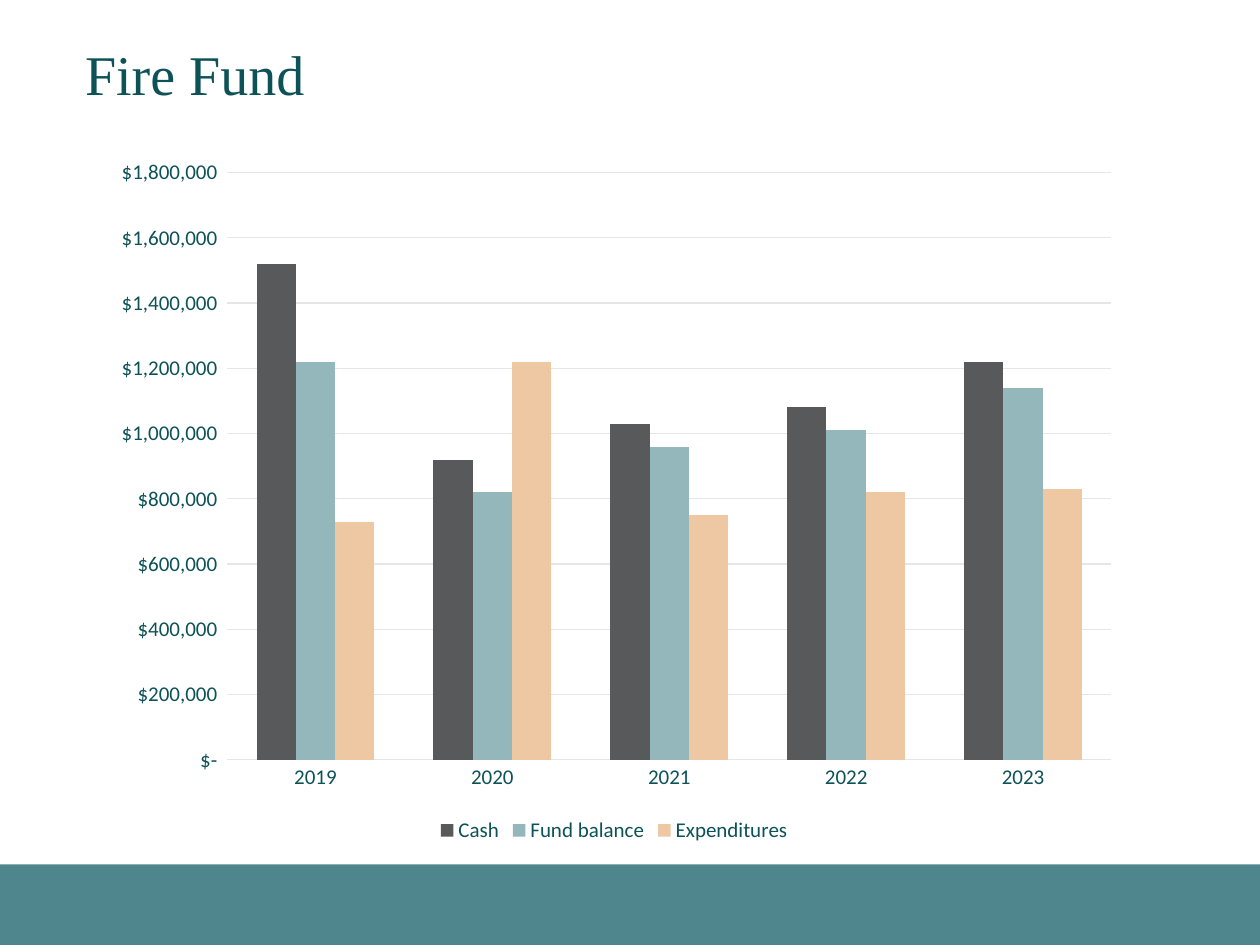
from dataclasses import dataclass

from pptx import Presentation
from pptx.chart.data import CategoryChartData
from pptx.dml.color import RGBColor
from pptx.enum.chart import XL_CHART_TYPE, XL_LEGEND_POSITION, XL_TICK_MARK
from pptx.enum.shapes import MSO_SHAPE
from pptx.enum.text import MSO_ANCHOR
from pptx.util import Pt

CLUSTERED = XL_CHART_TYPE.COLUMN_CLUSTERED
LEGEND_BOTTOM = XL_LEGEND_POSITION.BOTTOM
NO_TICK = XL_TICK_MARK.NONE
RECTANGLE = MSO_SHAPE.RECTANGLE
MIDDLE = MSO_ANCHOR.MIDDLE

COLORS = {
    "band": "4F868E",
    "text": "0D5257",
    "grid": "E6E6E7",
    "cash": "58595B",
    "balance": "93B7BB",
    "expenditures": "EDC8A3",
}
DOLLARS = r'_("$"* #,##0_);_("$"* \(#,##0\);_("$"* "-"_);_(@_)'
YEARS = ["2019", "2020", "2021", "2022", "2023"]


@dataclass
class FundSeries:
    name: str
    color: str
    thousands: list[int]


FUND_SERIES = [
    FundSeries("Cash", "cash", [1520, 920, 1030, 1080, 1220]),
    FundSeries("Fund balance", "balance", [1220, 820, 960, 1010, 1140]),
    FundSeries("Expenditures", "expenditures", [730, 1220, 750, 820, 830]),
]


def rgb(name: str) -> RGBColor:
    return RGBColor.from_string(COLORS[name])


def style_font(font, size: float, name: str = "Calibri") -> None:
    font.size = Pt(size)
    font.name = name
    font.color.rgb = rgb("text")


def style_line(line) -> None:
    line.color.rgb = rgb("grid")
    line.width = Pt(0.75)


def add_band(page) -> None:
    band = page.shapes.add_shape(RECTANGLE, Pt(0), Pt(494), Pt(720), Pt(46))
    band.shadow.inherit = False
    band.fill.solid()
    band.fill.fore_color.rgb = rgb("band")
    band.line.fill.background()


def add_title(page, text: str) -> None:
    box = page.shapes.add_textbox(Pt(41.5), Pt(16.5), Pt(171), Pt(55.5))
    frame = box.text_frame
    frame.word_wrap = True
    frame.vertical_anchor = MIDDLE
    para = frame.paragraphs[0]
    para.text = text
    para.line_spacing = 0.9
    style_font(para.font, 32, "Times New Roman")


def add_fund_chart(page, fund_series: list[FundSeries]) -> None:
    data = CategoryChartData(number_format=DOLLARS)
    data.categories = YEARS
    for item in fund_series:
        data.add_series(item.name, [value * 1000 for value in item.thousands])
    chart = page.shapes.add_chart(
        CLUSTERED, Pt(55), Pt(83.5), Pt(592), Pt(401), data
    ).chart
    style_font(chart.font, 12)
    chart.has_title = False
    chart.has_legend = True
    chart.legend.position = LEGEND_BOTTOM
    chart.legend.include_in_layout = False
    style_font(chart.legend.font, 12)

    for axis in (chart.category_axis, chart.value_axis):
        axis.major_tick_mark = NO_TICK
        axis.minor_tick_mark = NO_TICK
        style_font(axis.tick_labels.font, 12)
    style_line(chart.category_axis.format.line)

    amounts = chart.value_axis
    amounts.minimum_scale = 0
    amounts.maximum_scale = 1_800_000
    amounts.major_unit = 200_000
    amounts.format.line.fill.background()
    amounts.tick_labels.number_format = DOLLARS
    amounts.tick_labels.number_format_is_linked = False
    style_line(amounts.major_gridlines.format.line)

    plot = chart.plots[0]
    plot.gap_width = 150
    plot.overlap = 0
    plot.vary_by_categories = False
    for series, item in zip(plot.series, fund_series):
        series.format.fill.solid()
        series.format.fill.fore_color.rgb = rgb(item.color)


def main() -> None:
    deck = Presentation()
    deck.slide_width = Pt(720)
    deck.slide_height = Pt(540)
    page = deck.slides.add_slide(deck.slide_layouts[6])
    add_band(page)
    add_title(page, "Fire Fund")
    add_fund_chart(page, FUND_SERIES)
    deck.save("out.pptx")


if __name__ == "__main__":
    main()
